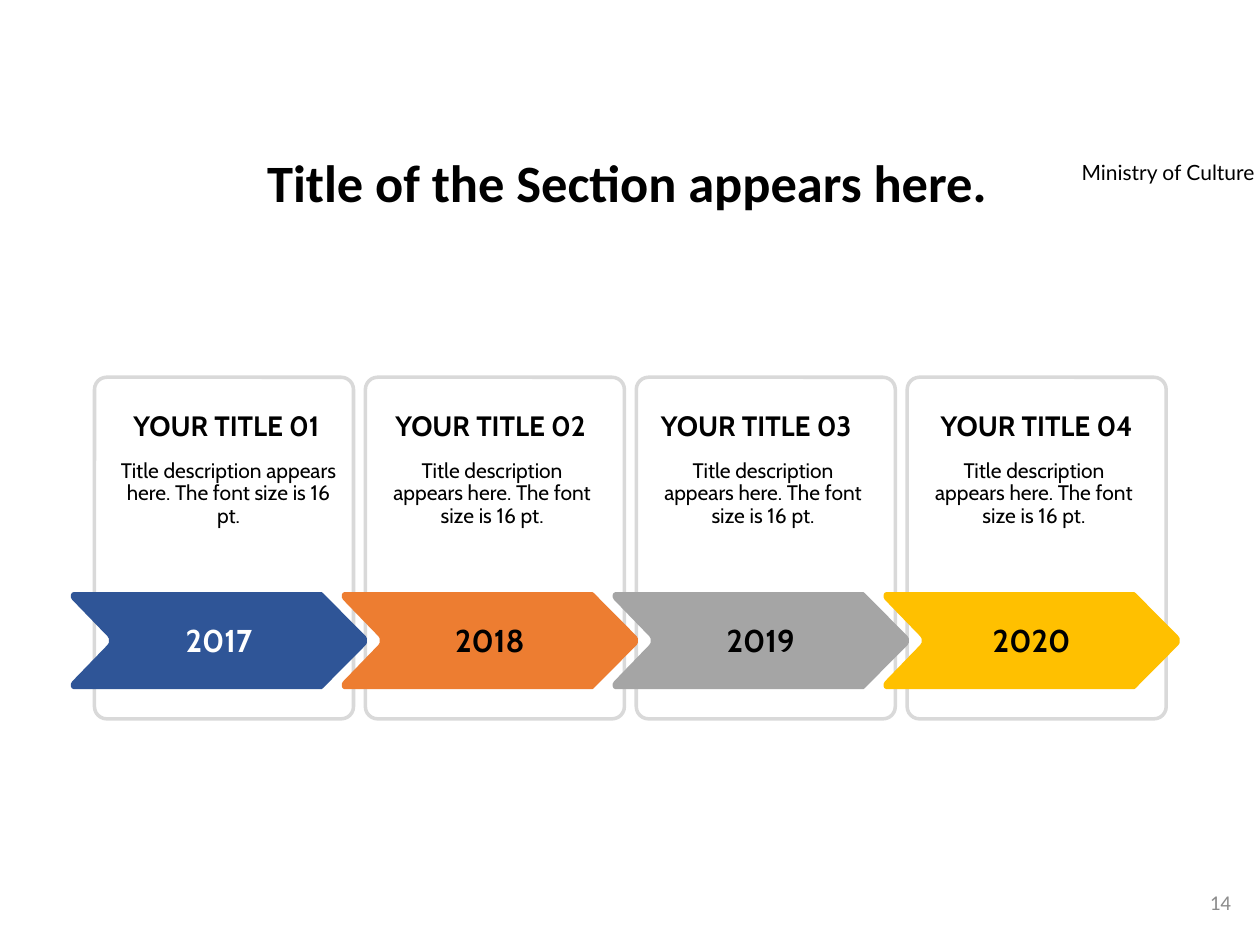
from dataclasses import dataclass

from pptx import Presentation
from pptx.dml.color import RGBColor
from pptx.enum.shapes import MSO_SHAPE
from pptx.enum.text import MSO_ANCHOR as Anchor, MSO_AUTO_SIZE as AutoSize, PP_ALIGN as Align
from pptx.util import Pt


@dataclass(frozen=True)
class Theme:
    heading_font: str = "Calibri"
    label_font: str = "Lato"
    card_font: str = "Cabin"
    heading_size: int = 30
    year_size: int = 18
    card_title_size: int = 16
    body_size: int = 12
    text: str = "000000"
    light_text: str = "FFFFFF"
    muted: str = "8C8C8C"
    frame: str = "D9D9D9"
    blue: str = "2F5597"
    orange: str = "ED7D31"
    gray: str = "A5A5A5"
    yellow: str = "FFC000"


@dataclass(frozen=True)
class Milestone:
    """Title and description boxes are (left, width) within the column."""
    year: str
    title: str
    fill: str
    year_color: str
    title_box: tuple
    description_box: tuple


THEME = Theme()
DESCRIPTION = "Title description appears here. The font size is 16 pt."
MILESTONES = [
    Milestone("2017", "YOUR TITLE 01", THEME.blue, THEME.light_text, (21.6, 136), (23.8, 134)),
    Milestone("2018", "YOUR TITLE 02", THEME.orange, THEME.text, (20.2, 131), (23, 127.4)),
    Milestone("2019", "YOUR TITLE 03", THEME.gray, THEME.text, (15.8, 134), (23, 127.4)),
    Milestone("2020", "YOUR TITLE 04", THEME.yellow, THEME.text, (20.2, 136), (23, 127.4)),
]
COLUMN_PITCH = 154.8
# Upper half of the arrow, from the notch round to the tip; the lower half mirrors it.
ARROW_HEIGHT = 55.4
ARROW_UPPER = [(22.4, 26.5), (21.6, 25.2), (1.4, 4.3), (0.7, 3), (0.7, 1.6), (1.2, 0.5),
               (2.2, 0), (144, 0), (144.7, 0.5), (169.2, 25.2), (169.9, 26.5)]


def add_text(slide, box, text, font, size, color, bold=False, align=Align.CENTER,
             anchor=Anchor.TOP, margins=(7.2, 3.6), spacing=None, grow=True):
    text_box = slide.shapes.add_textbox(*map(Pt, box))
    frame = text_box.text_frame
    frame.word_wrap = True
    frame.auto_size = AutoSize.SHAPE_TO_FIT_TEXT if grow else AutoSize.NONE
    frame.vertical_anchor = anchor
    frame.margin_left = frame.margin_right = Pt(margins[0])
    frame.margin_top = frame.margin_bottom = Pt(margins[1])
    paragraph = frame.paragraphs[0]
    paragraph.text = text
    paragraph.alignment = align
    if spacing:
        paragraph.line_spacing = spacing
    paragraph.font.name = font
    paragraph.font.size = Pt(size)
    paragraph.font.bold = bold
    paragraph.font.color.rgb = RGBColor.from_string(color)


def add_frame(slide, left, top, width, height):
    frame = slide.shapes.add_shape(MSO_SHAPE.ROUNDED_RECTANGLE,
                                   *map(Pt, (left, top, width, height)))
    frame.adjustments[0] = 7 / width
    frame.shadow.inherit = False
    frame.fill.background()
    frame.line.color.rgb = RGBColor.from_string(THEME.frame)
    frame.line.width = Pt(2)


def add_arrow(slide, left, top, fill):
    lower = [(x, ARROW_HEIGHT - y) for x, y in reversed(ARROW_UPPER)]
    points = [(Pt(left + x), Pt(top + y)) for x, y in ARROW_UPPER + lower]
    builder = slide.shapes.build_freeform(*points[0])
    builder.add_line_segments(points[1:], close=True)
    arrow = builder.convert_to_shape()
    arrow.shadow.inherit = False
    arrow.fill.solid()
    arrow.fill.fore_color.rgb = RGBColor.from_string(fill)
    arrow.line.fill.background()


def add_milestone_text(slide, left, top, milestone):
    add_text(slide, (left + 55.4, top + 136.8, 59.8, 28.8), milestone.year, THEME.card_font,
             THEME.year_size, milestone.year_color, bold=True, anchor=Anchor.MIDDLE)
    title_left, title_width = milestone.title_box
    add_text(slide, (left + title_left, top + 15.1, title_width, 26.6), milestone.title,
             THEME.card_font, THEME.card_title_size, THEME.text, bold=True,
             anchor=Anchor.BOTTOM)
    text_left, text_width = milestone.description_box
    add_text(slide, (left + text_left, top + 46.8, text_width, 41.8), DESCRIPTION,
             THEME.card_font, THEME.body_size, THEME.text, margins=(2.9, 1.4), spacing=0.9)


def add_timeline(slide, left, top):
    """Draw all frames first, since each arrow overlaps the next column."""
    columns = [(left + i * COLUMN_PITCH, m) for i, m in enumerate(MILESTONES)]
    for column_left, _ in columns:
        add_frame(slide, column_left + 14.2, top + 1, 148, 195.2)
    for column_left, milestone in columns:
        add_arrow(slide, column_left, top + 123.8, milestone.fill)
    for column_left, milestone in columns:
        add_milestone_text(slide, column_left, top, milestone)


def add_header(slide, left, top):
    add_text(slide, (left, top, 535, 56.9), "Title of the Section appears here.",
             THEME.heading_font, THEME.heading_size, THEME.text, bold=True, spacing=0.9,
             grow=False)
    add_text(slide, (left + 498, top + 1.4, 157, 21.6), "Ministry of Culture",
             THEME.label_font, THEME.body_size, THEME.text)


def add_page_number(slide, left, top):
    add_text(slide, (left, top, 162, 28.8), "14", THEME.heading_font, THEME.body_size,
             THEME.muted, align=Align.RIGHT, anchor=Anchor.MIDDLE, grow=False)


def main():
    presentation = Presentation()
    presentation.slide_width, presentation.slide_height = Pt(720), Pt(540)
    slide = presentation.slides.add_slide(presentation.slide_layouts[6])
    add_header(slide, 91, 86.4)
    add_timeline(slide, 39.8, 214.6)
    add_page_number(slide, 548.6, 501.1)
    presentation.save("out.pptx")


if __name__ == "__main__":
    main()
